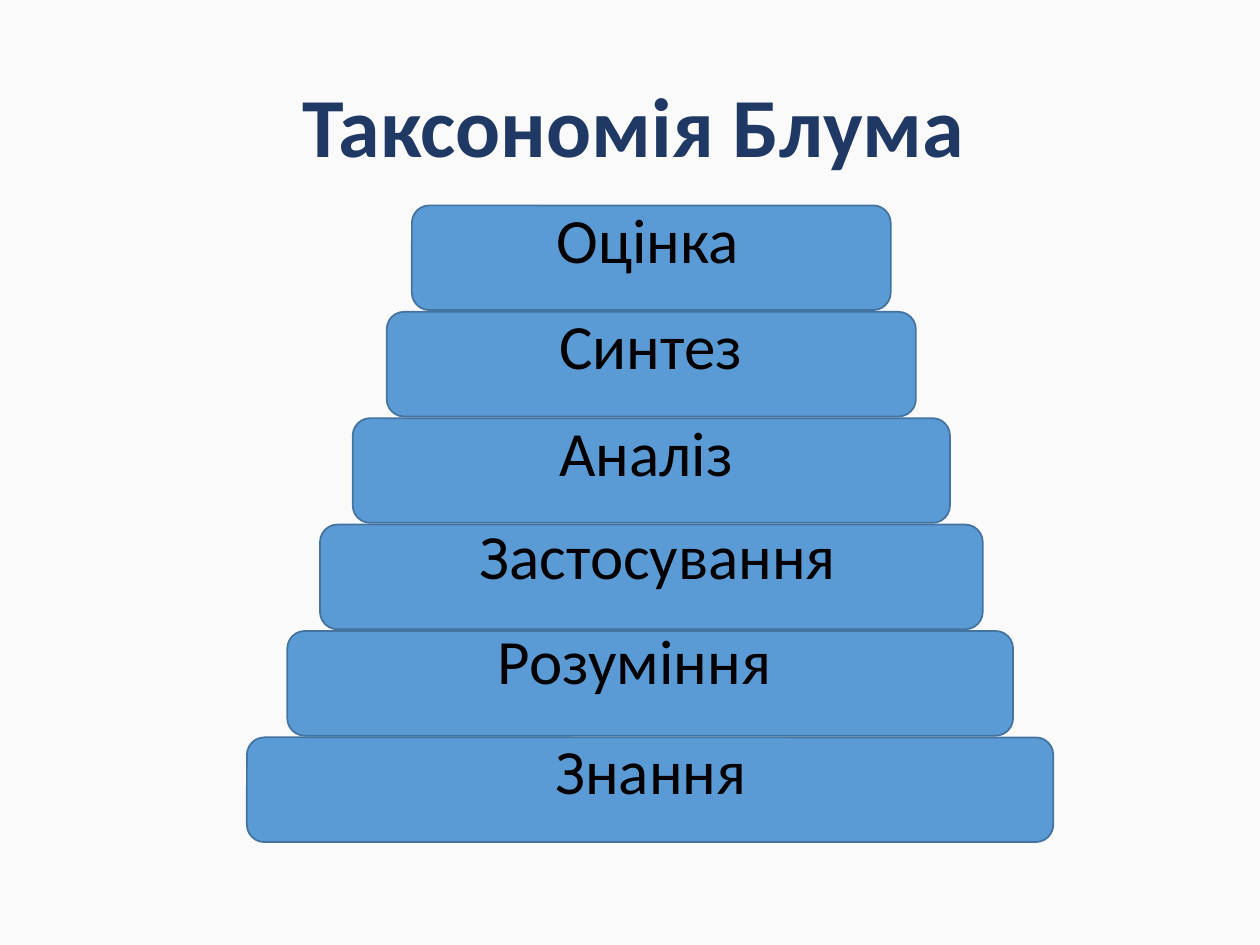
from dataclasses import dataclass

from lxml.etree import SubElement as Sub
from pptx import Presentation
from pptx.dml.color import RGBColor as RGB
from pptx.enum.shapes import MSO_SHAPE as Shape
from pptx.enum.text import MSO_ANCHOR as Anchor, MSO_AUTO_SIZE as Fit, PP_ALIGN as Align
from pptx.oxml.ns import qn
from pptx.util import Pt


@dataclass(frozen=True)
class Theme:
    """Colours, font and type sizes of the slide."""
    back: RGB = RGB(0xFA, 0xFA, 0xFA)
    title: RGB = RGB(0x20, 0x38, 0x64)
    fill: RGB = RGB(0x5B, 0x9B, 0xD5)
    edge: RGB = RGB(0x43, 0x73, 0x9E)
    ink: RGB = RGB(0, 0, 0)
    halo: str = "FFFFFF"
    font: str = "Calibri"
    big: int = 48
    body: int = 36


THEME = Theme()
STEP, TALL = 60.8, 59.8
LEVELS = [
    ("Оцінка", 94.3, 273.6, (170, -6.5, 128.2)),
    ("Синтез", 79.9, 302.4, (171.4, -6.5, 125.3)),
    ("Аналіз", 60.5, 341.3, (171.4, -6.5, 126)),
    ("Застосування", 41.8, 378.7, (126, -8.2, 227.5)),
    ("Розуміння", 23.1, 414.7, (136.1, -9.2, 195.1)),
    ("Знання", 0, 460.8, (169.2, -6.7, 130.3)),
]


def style(run, size, color, bold=False):
    """Set the font of a run."""
    font = run.font
    font.name, font.size, font.bold = THEME.font, Pt(size), bold
    font.color.rgb = color


def add_title(slide, text, x, y, wide, tall):
    """Place the centred title with its thin white outline."""
    frame = slide.shapes.add_textbox(Pt(x), Pt(y), Pt(wide), Pt(tall)).text_frame
    frame.word_wrap = True
    frame.vertical_anchor = Anchor.MIDDLE
    frame.text = text
    para = frame.paragraphs[0]
    para.alignment, para.line_spacing = Align.CENTER, 0.9
    run = para.runs[0]
    props = run.font._element
    line = Sub(props, qn("a:ln"), w=str(Pt(0.75)))
    Sub(Sub(line, qn("a:solidFill")), qn("a:srgbClr"), val=THEME.halo)
    style(run, THEME.big, THEME.title, True)


def add_bar(slide, x, y, wide):
    """Place one rounded bar of the pyramid."""
    bar = slide.shapes.add_shape(
        Shape.ROUNDED_RECTANGLE, Pt(x), Pt(y), Pt(wide), Pt(TALL))
    bar.shadow.inherit = False
    bar.fill.solid()
    bar.fill.fore_color.rgb = THEME.fill
    bar.line.color.rgb = THEME.edge
    bar.line.width = Pt(1)


def add_label(slide, text, x, y, wide):
    """Place the name of one level."""
    frame = slide.shapes.add_textbox(Pt(x), Pt(y), Pt(wide), Pt(51)).text_frame
    frame.word_wrap = False
    frame.auto_size = Fit.SHAPE_TO_FIT_TEXT
    frame.text = text
    style(frame.paragraphs[0].runs[0], THEME.body, THEME.ink)


def add_pyramid(slide, x, y):
    """Stack the bars from the base up, then lay the names over them."""
    rows = [(y + i * STEP, *level) for i, level in enumerate(LEVELS)][::-1]
    for top, _, left, wide, _ in rows:
        add_bar(slide, x + left, top, wide)
    for top, name, _, _, (left, lift, wide) in rows:
        add_label(slide, name, x + left, top + lift, wide)


def main():
    """Build and save the slide."""
    deck = Presentation()
    deck.slide_width, deck.slide_height = Pt(720), Pt(540)
    slide = deck.slides.add_slide(deck.slide_layouts[6])
    slide.background.fill.solid()
    slide.background.fill.fore_color.rgb = THEME.back
    add_title(slide, "Таксономія Блума", 51.8, 43.2, 620.6, 62.6)
    add_pyramid(slide, 141.1, 117.4)
    deck.save("out.pptx")


if __name__ == "__main__":
    main()
